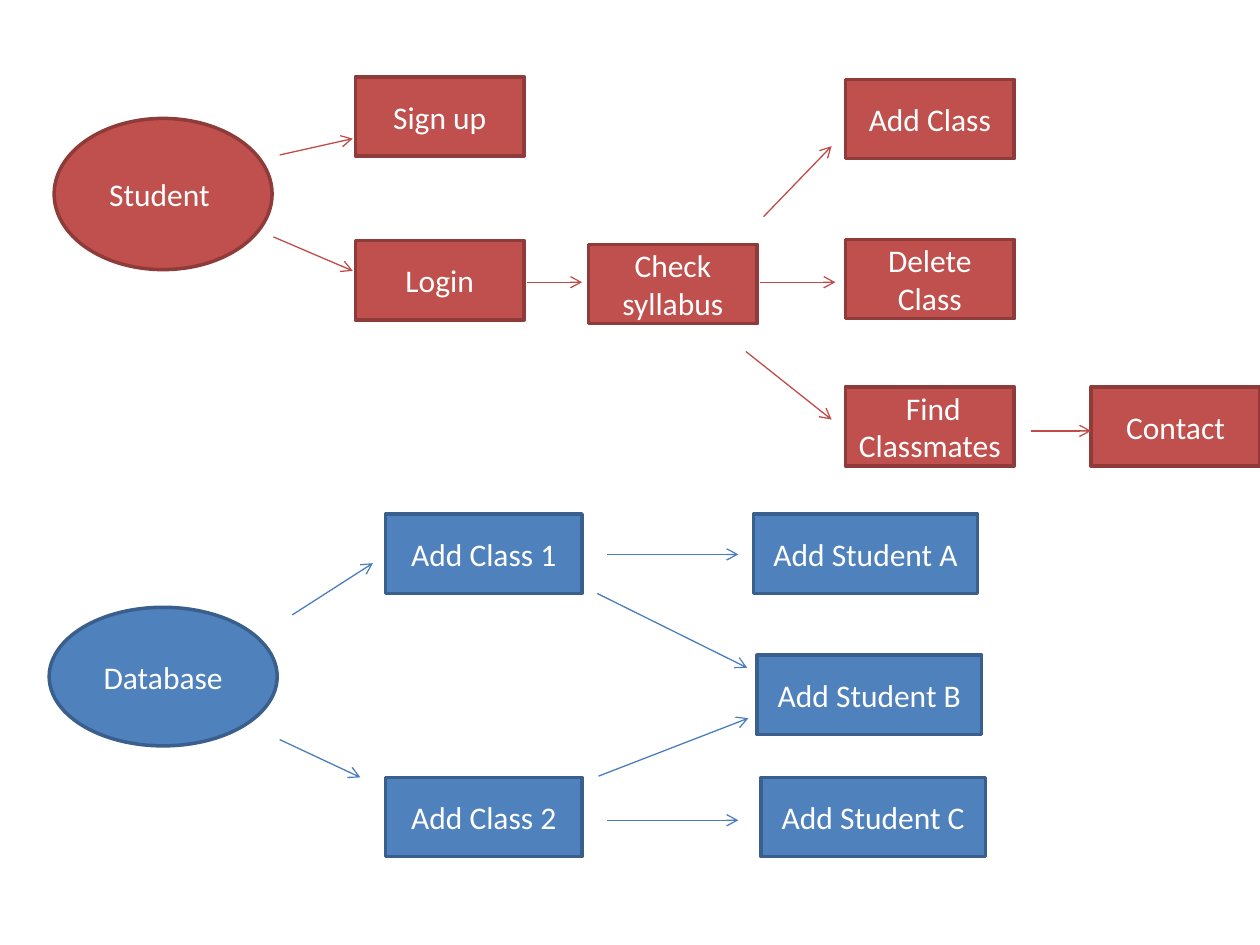
from lxml import etree
from pptx import Presentation
from pptx.dml.color import RGBColor
from pptx.enum.shapes import MSO_CONNECTOR, MSO_SHAPE
from pptx.enum.text import MSO_ANCHOR, PP_ALIGN
from pptx.oxml.ns import qn
from pptx.util import Inches, Pt

OVAL, RECTANGLE = MSO_SHAPE.OVAL, MSO_SHAPE.RECTANGLE
STRAIGHT = MSO_CONNECTOR.STRAIGHT
MIDDLE, CENTER = MSO_ANCHOR.MIDDLE, PP_ALIGN.CENTER
BOX_HEIGHT = 0.63
STEP_WIDTH, CLASS_WIDTH, ENTRY_WIDTH = 1.34, 1.56, 1.78


def color(value):
    return RGBColor.from_string(value)


student_nodes = [(OVAL, "Student ", 0.43, 0.94, 1.73, 1.2)] + [
    (RECTANGLE, text, left, top, STEP_WIDTH, BOX_HEIGHT)
    for text, left, top in [
        ("Sign up", 2.82, 0.61),
        ("Login", 2.82, 1.91),
        ("Check\nsyllabus", 4.67, 1.94),
        ("Add Class", 6.71, 0.63),
        ("Delete Class", 6.71, 1.9),
        (" Find Classmates", 6.71, 3.07),
        ("Contact", 8.66, 3.07),
    ]
]
student_arrows = [
    (2.22, 1.23, 2.8, 1.1),
    (2.17, 1.88, 2.8, 2.15),
    (4.18, 2.24, 4.62, 2.24),
    (6.06, 1.72, 6.6, 1.16),
    (6.03, 2.24, 6.63, 2.24),
    (5.92, 2.79, 6.6, 3.33),
    (8.18, 3.42, 8.66, 3.42),
]

database_nodes = [(OVAL, "Database", 0.39, 4.82, 1.81, 1.1)] + [
    (RECTANGLE, text, left, top, width, BOX_HEIGHT)
    for text, left, top, width in [
        ("Add Class 1", 3.06, 4.08, CLASS_WIDTH),
        ("Add Class 2", 3.06, 6.17, CLASS_WIDTH),
        ("Add Student A", 5.98, 4.08, ENTRY_WIDTH),
        ("Add Student B", 6.01, 5.2, ENTRY_WIDTH),
        ("Add Student C", 6.04, 6.17, ENTRY_WIDTH),
    ]
]
database_arrows = [
    (2.32, 4.88, 2.96, 4.47),
    (2.22, 5.87, 2.86, 6.17),
    (4.82, 4.4, 5.86, 4.4),
    (4.74, 4.71, 5.93, 5.3),
    (4.75, 6.16, 5.94, 5.7),
    (4.82, 6.51, 5.86, 6.51),
]

flows = [
    ("C0504D", "8E3B39", "BF4C48", student_nodes, student_arrows),
    ("4F81BD", "3A5F8C", "4B7EBC", database_nodes, database_arrows),
]

presentation = Presentation()
presentation.slide_width = Inches(10)
presentation.slide_height = Inches(7.5)
slide = presentation.slides.add_slide(presentation.slide_layouts[6])

for fill_color, border_color, arrow_color, nodes, arrows in flows:
    group = slide.shapes.add_group_shape()

    for kind, text, *box in nodes:
        shape = group.shapes.add_shape(kind, *[Inches(length) for length in box])
        shape.shadow.inherit = False
        shape.fill.solid()
        shape.fill.fore_color.rgb = color(fill_color)
        shape.line.color.rgb = color(border_color)
        shape.line.width = Pt(2)
        text_frame = shape.text_frame
        text_frame.word_wrap = True
        text_frame.vertical_anchor = MIDDLE
        for index, line in enumerate(text.split("\n")):
            paragraph = text_frame.add_paragraph() if index else text_frame.paragraphs[0]
            paragraph.alignment = CENTER
            run = paragraph.add_run()
            run.text = line
            run.font.name = "Calibri"
            run.font.size = Pt(18)
            run.font.color.rgb = color("FFFFFF")

    for ends in arrows:
        connector = group.shapes.add_connector(STRAIGHT, *[Inches(length) for length in ends])
        connector.line.color.rgb = color(arrow_color)
        connector.line.width = Pt(0.75)
        etree.SubElement(connector.line._get_or_add_ln(), qn("a:tailEnd"), type="arrow")
        etree.SubElement(connector._element.spPr, qn("a:effectLst"))

presentation.save("out.pptx")
